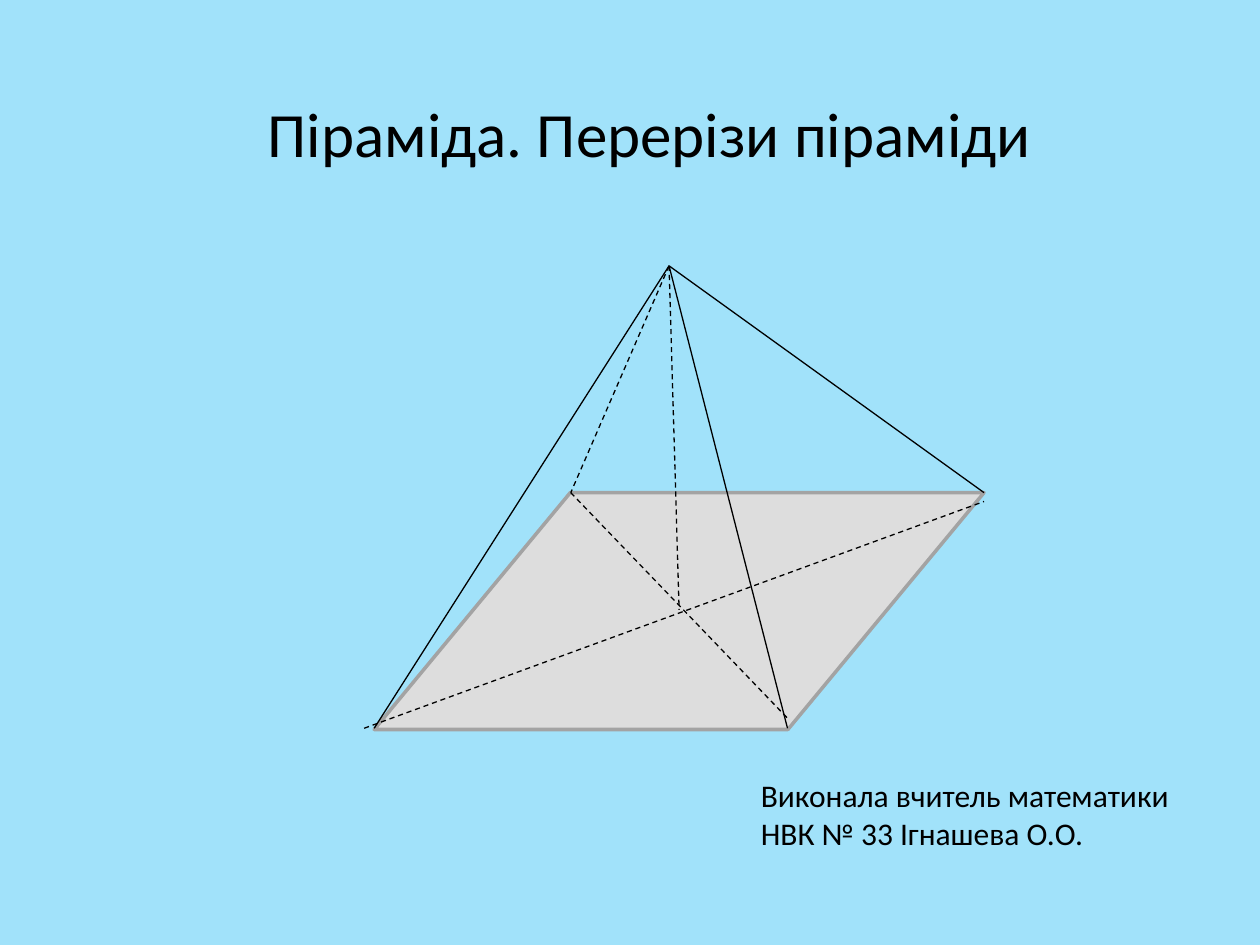
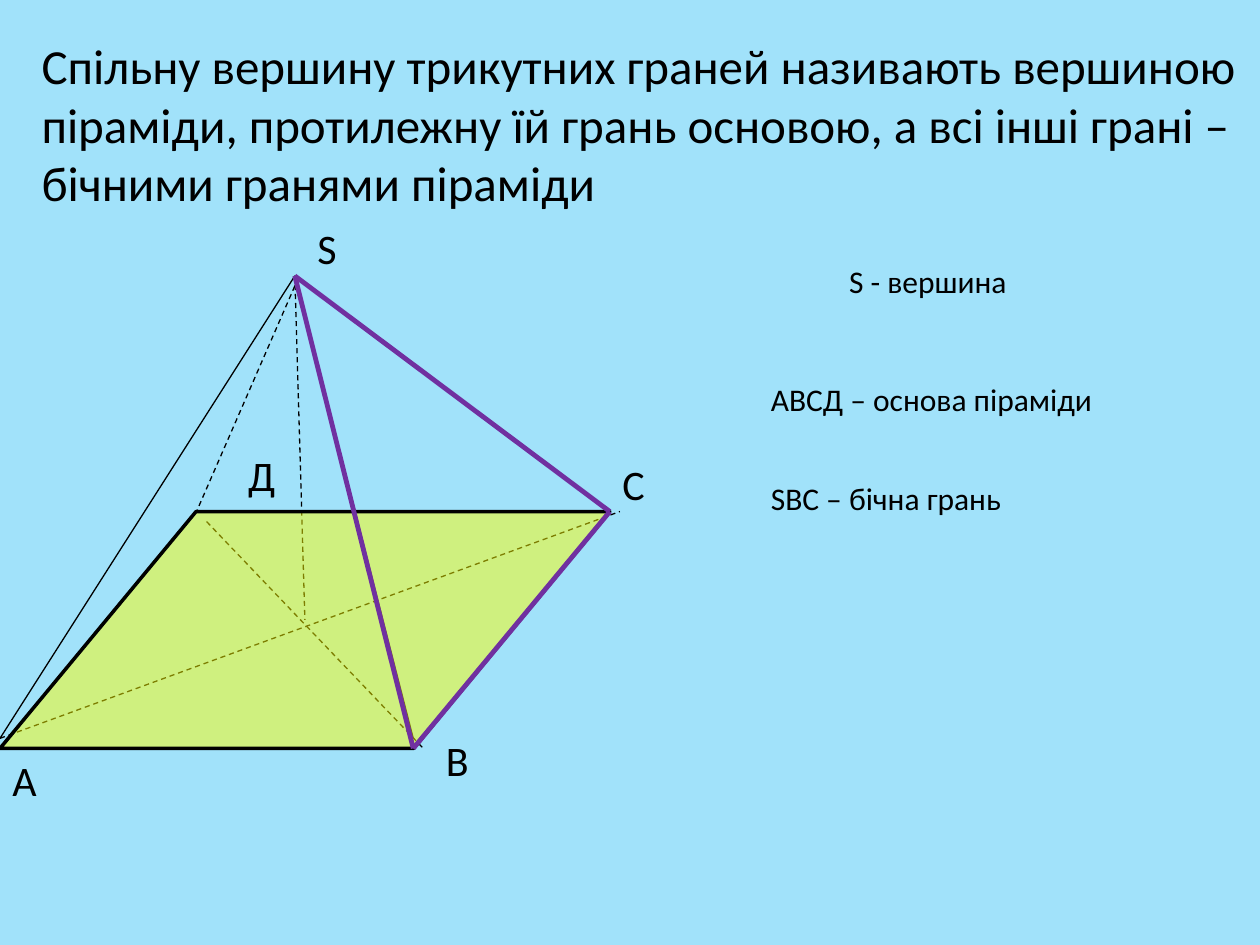
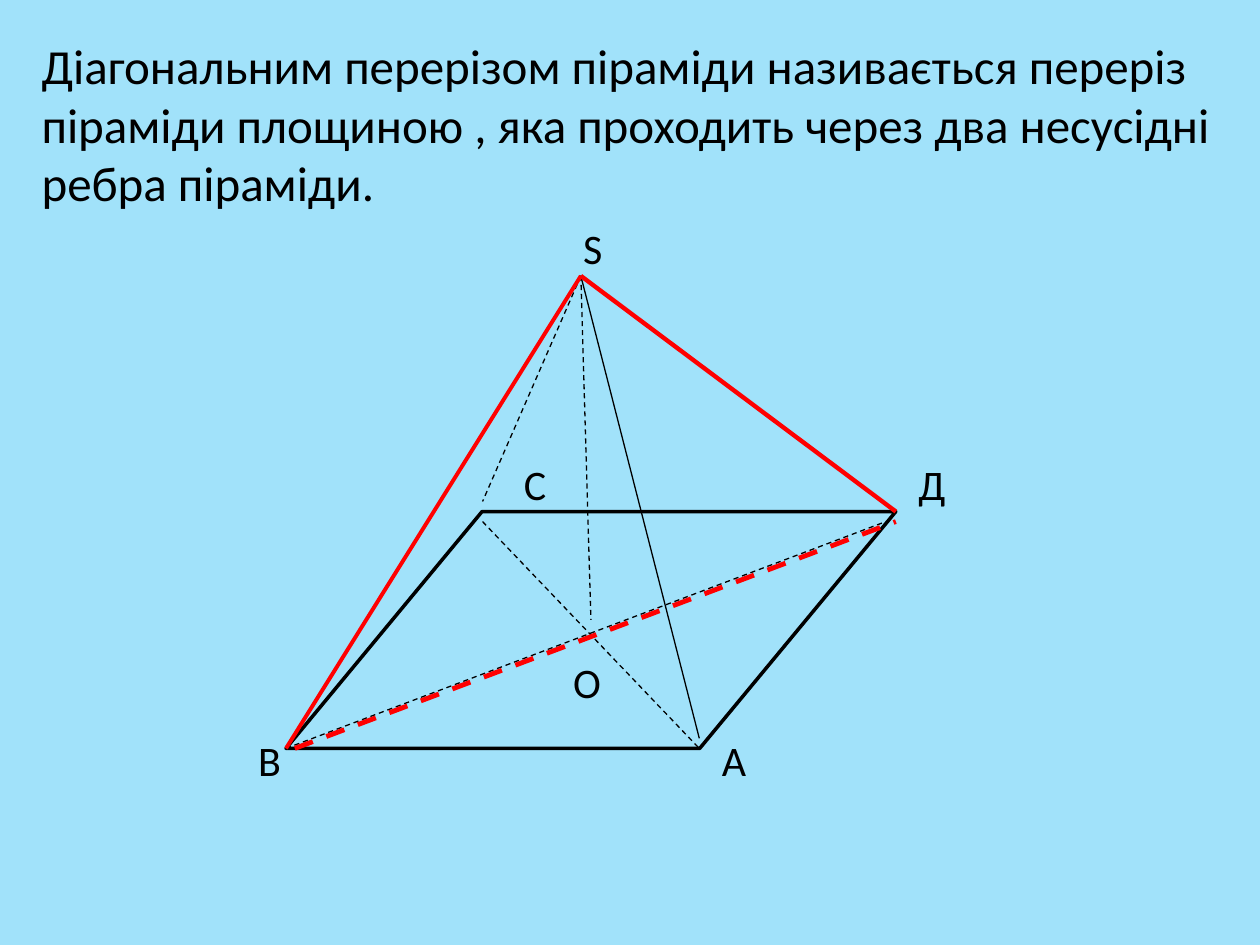
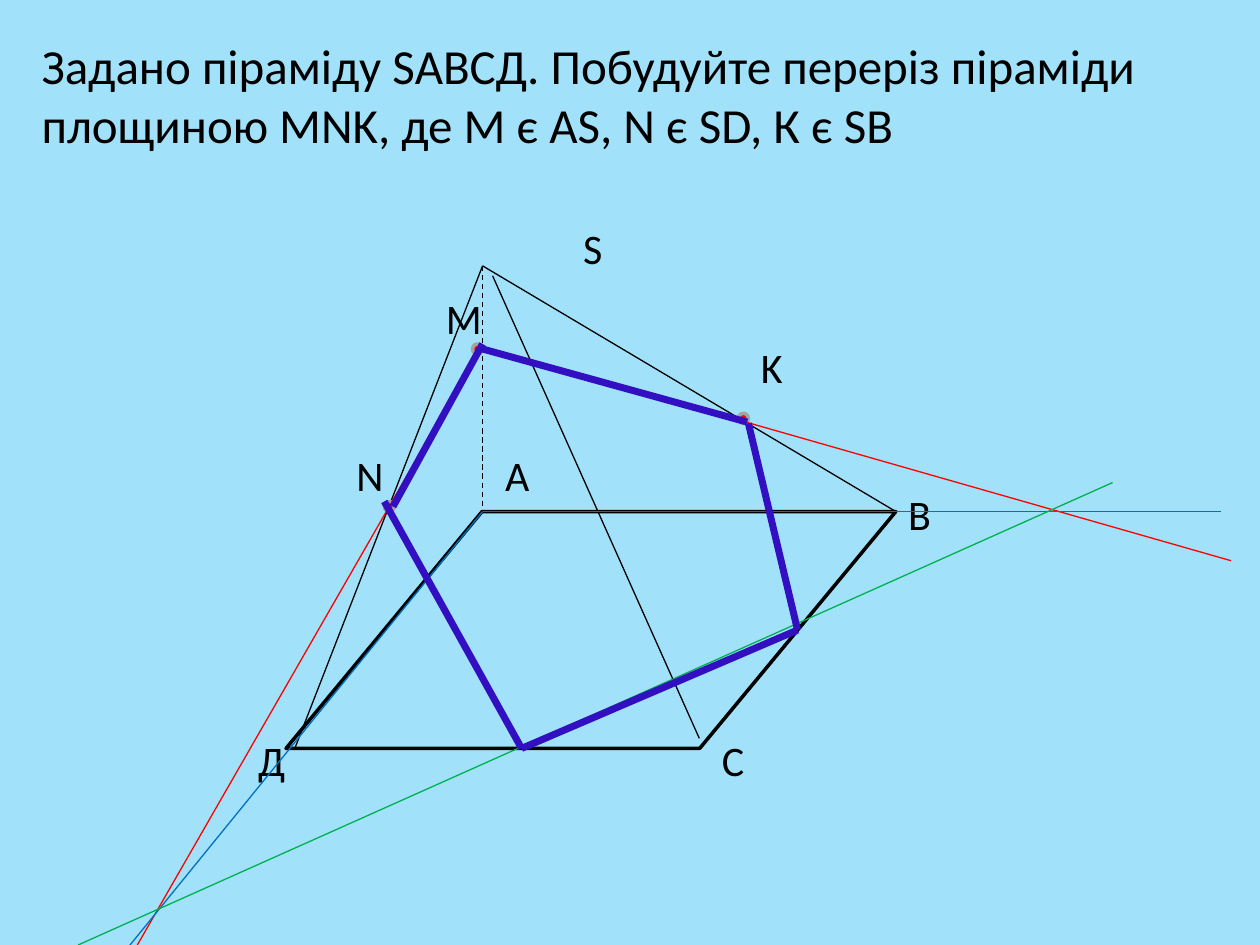
import pptx
import pptx.util
import pptx.dml.color
import pptx.enum.dml
import pptx.enum.shapes
import pptx.enum.text
import pptx.oxml
import pptx.oxml.ns
import lxml.etree

Inches = pptx.util.Inches
RGBColor = pptx.dml.color.RGBColor
SHAPE = pptx.enum.shapes.MSO_SHAPE
ALIGN = pptx.enum.text.PP_ALIGN

# Shared look
FONT = "Calibri"
SKY = RGBColor(0xA1, 0xE2, 0xFA)
BLACK = RGBColor(0, 0, 0)
GRAY = RGBColor(0xA3, 0xA3, 0xA3)
PALE = RGBColor(0xDD, 0xDD, 0xDD)
YELLOW = RGBColor(0xFF, 0xFF, 0)
RED = RGBColor(0xFF, 0, 0)
PURPLE = RGBColor(0x70, 0x30, 0xA0)
BLUE = RGBColor(0, 0x70, 0xC0)
GREEN = RGBColor(0, 0xB0, 0x50)
INDIGO = RGBColor(0x32, 0x10, 0xC2)
HEAD = (0.23, 0.23, 9.77, 1.51)
THIN = 0.75
LETTER = (0.31, 0.5)


def write(frame, text, size, align=ALIGN.LEFT):
    """Put one run of text at the top of a frame."""
    frame.word_wrap = True
    frame.auto_size = pptx.enum.text.MSO_AUTO_SIZE.NONE
    frame.vertical_anchor = pptx.enum.text.MSO_ANCHOR.TOP
    para = frame.paragraphs[0]
    para.alignment = align
    run = para.add_run()
    run.text = text
    run.font.name = FONT
    run.font.size = pptx.util.Pt(size)
    run.font.color.rgb = BLACK


def add_page(deck, title, box=HEAD, size=28, align=ALIGN.LEFT):
    """Add a slide with its title."""
    slide = deck.slides.add_slide(deck.slide_layouts.get_by_name("Title Only"))
    head = slide.shapes.title
    head.left, head.top, head.width, head.height = map(Inches, box)
    write(head.text_frame, title, size, align)
    return slide


def add_text(slide, text, box, size=18):
    frame = slide.shapes.add_textbox(*map(Inches, box)).text_frame
    write(frame, text, size)


def add_names(slide, names):
    """Name points: letter, left, top."""
    for name, left, top in names:
        add_text(slide, name, (left, top, *LETTER), 24)


def add_line(slide, start, end, color=BLACK, width=THIN, dash=False):
    line = slide.shapes.add_connector(
        pptx.enum.shapes.MSO_CONNECTOR.STRAIGHT, *map(Inches, (*start, *end)))
    line.line.color.rgb = color
    line.line.width = pptx.util.Pt(width)
    if dash:
        line.line.dash_style = pptx.enum.dml.MSO_LINE.DASH
    lxml.etree.SubElement(line._element.spPr, pptx.oxml.ns.qn("a:effectLst"))


def add_rays(slide, apex, ends, **style):
    for end in ends:
        add_line(slide, apex, end, **style)


def add_chain(slide, points, **style):
    """Join each point to the next one."""
    for start, end in zip(points, points[1:]):
        add_line(slide, start, end, **style)


def add_form(slide, kind, box, fill, edge):
    form = slide.shapes.add_shape(kind, *map(Inches, box))
    form.shadow.inherit = False
    form.line.color.rgb = edge
    form.line.width = pptx.util.Pt(2)
    if fill is None:
        form.fill.background()
    else:
        form.fill.solid()
        form.fill.fore_color.rgb = fill
    return form


def add_base(slide, left, top, fill=None, edge=BLACK):
    """Draw the base of the pyramid."""
    base = add_form(slide, SHAPE.PARALLELOGRAM, (left, top, 4.84, 1.88), fill, edge)
    base.adjustments[0] = 0.828
    return base


def fade(form, share):
    """Make a solid fill see-through; share is the opacity in percent."""
    tint = form.fill._xPr.find(".//" + pptx.oxml.ns.qn("a:srgbClr"))
    alpha = lxml.etree.SubElement(tint, pptx.oxml.ns.qn("a:alpha"))
    alpha.set("val", str(share * 1000))


def add_cover(deck):
    slide = add_page(deck, "Піраміда. Перерізи піраміди",
                     (1.25, 0.7, 7.81, 0.71), 36, ALIGN.CENTER)
    apex = (5.31, 2.11)
    add_base(slide, 2.97, 3.91, PALE, GRAY)
    add_line(slide, (4.53, 3.91), (6.25, 5.7), dash=True)
    add_line(slide, (2.89, 5.78), (7.81, 3.98), dash=True)
    add_rays(slide, apex, [(5.39, 4.84), (4.53, 3.91)], dash=True)
    add_rays(slide, apex, [(6.25, 5.78), (7.81, 3.91), (2.97, 5.78)])
    add_text(slide, "Виконала вчитель математики НВК № 33 Ігнашева О.О.",
             (5.94, 6.11, 3.54, 1.01))


def add_parts(deck):
    slide = add_page(deck, "Спільну вершину трикутних граней називають вершиною "
                     "піраміди, протилежну їй грань основою, а всі інші грані – "
                     "бічними гранями піраміди")
    apex, right, front = (2.34, 2.19), (4.84, 4.06), (3.28, 5.94)
    # Hidden lines lie under the tinted base
    add_line(slide, (1.64, 4.14), (3.36, 5.94), dash=True)
    add_line(slide, (0, 5.86), (4.92, 4.06), dash=True)
    add_line(slide, apex, (2.42, 4.92), dash=True)
    add_line(slide, (2.34, 2.27), (1.56, 4.06), dash=True)
    add_rays(slide, apex, [(3.28, 5.86), right, (0, 5.86)])
    fade(add_base(slide, 0, 4.06, YELLOW), 49)
    add_names(slide, [("S", 2.42, 1.72), ("А", 0, 5.94), ("В", 3.44, 5.78),
                      ("Д", 1.87, 3.52), ("С", 4.84, 3.59)])
    # Side face
    add_chain(slide, [right, apex, front, right], color=PURPLE, width=2.75)
    # Legend
    add_text(slide, "S - вершина", (6.64, 2.03, 2.66, 0.4))
    add_text(slide, "АВСД – основа піраміди", (6.02, 2.97, 2.89, 0.4))
    add_text(slide, "SВС – бічна грань", (6.02, 3.75, 3.28, 0.4))


def add_cut(deck):
    slide = add_page(deck, "Діагональним перерізом піраміди називається переріз "
                     "піраміди площиною , яка проходить через два несусідні "
                     "ребра піраміди.")
    apex, right, left = (4.61, 2.19), (7.11, 4.06), (2.27, 5.94)
    add_base(slide, 2.27, 4.06)
    add_line(slide, (3.83, 4.14), (5.55, 5.94), dash=True)
    add_line(slide, left, (7.03, 4.14), dash=True)
    add_rays(slide, apex, [(4.69, 4.92), (3.83, 3.98)], dash=True)
    add_rays(slide, apex, [(5.55, 5.86), right, left])
    add_names(slide, [("S", 4.53, 1.72), ("А", 5.63, 5.78), ("В", 1.95, 5.78),
                      ("Д", 7.19, 3.59), ("С", 4.06, 3.59), ("О", 4.45, 5.16)])
    # Diagonal section
    add_line(slide, (2.34, 5.94), (7.11, 4.14), RED, 2.75, dash=True)
    add_line(slide, apex, right, RED, 2.5)
    add_line(slide, apex, left, RED, 2.25)


def add_task(deck):
    slide = add_page(deck, "Задано піраміду SАВСД. Побудуйте переріз піраміди "
                     "площиною MNK, де M є AS, N є SD, К є SB",
                     (0.23, 0.23, 9.77, 1.04))
    apex, back = (3.83, 2.11), (3.83, 4.06)
    add_base(slide, 2.27, 4.06)
    add_line(slide, (3.91, 2.19), (5.55, 5.86))
    add_rays(slide, apex, [(7.11, 4.06), (2.34, 5.94)])
    add_line(slide, apex, back, dash=True)
    # Given points
    for left, top in [(3.05, 3.98), (5.86, 3.28), (3.75, 2.73)]:
        add_form(slide, SHAPE.OVAL, (left, top, 0.08, 0.08), RED, GRAY)
    add_names(slide, [("S", 4.53, 1.72), ("А", 3.91, 3.52), ("В", 7.11, 3.83),
                      ("Д", 1.95, 5.78), ("С", 5.63, 5.78), ("N", 2.73, 3.52),
                      ("M", 3.44, 2.27), ("K", 5.94, 2.66)])
    # Helper lines
    add_line(slide, (3.82, 2.75), (9.77, 4.45), RED)
    add_line(slide, (3.83, 2.73), (1.09, 7.5), RED)
    add_rays(slide, back, [(9.69, 4.06), (0.78, 7.81)], color=BLUE)
    add_line(slide, (0.62, 7.5), (8.83, 3.83), GREEN)
    # Section outline
    bold = {"color": INDIGO, "width": 4}
    add_line(slide, (5.93, 3.35), (3.83, 2.77), **bold)
    add_line(slide, (3.83, 2.73), (3.12, 4.02), **bold)
    add_chain(slide, [(3.05, 3.98), (4.14, 5.94), (6.33, 5), (5.94, 3.36)], **bold)


def main():
    deck = pptx.Presentation()
    deck.slide_width, deck.slide_height = Inches(10), Inches(7.5)
    back = deck.slide_master.background.fill
    back.solid()
    back.fore_color.rgb = SKY
    add_cover(deck)
    add_parts(deck)
    add_cut(deck)
    add_task(deck)
    deck.save("out.pptx")


if __name__ == "__main__":
    main()
